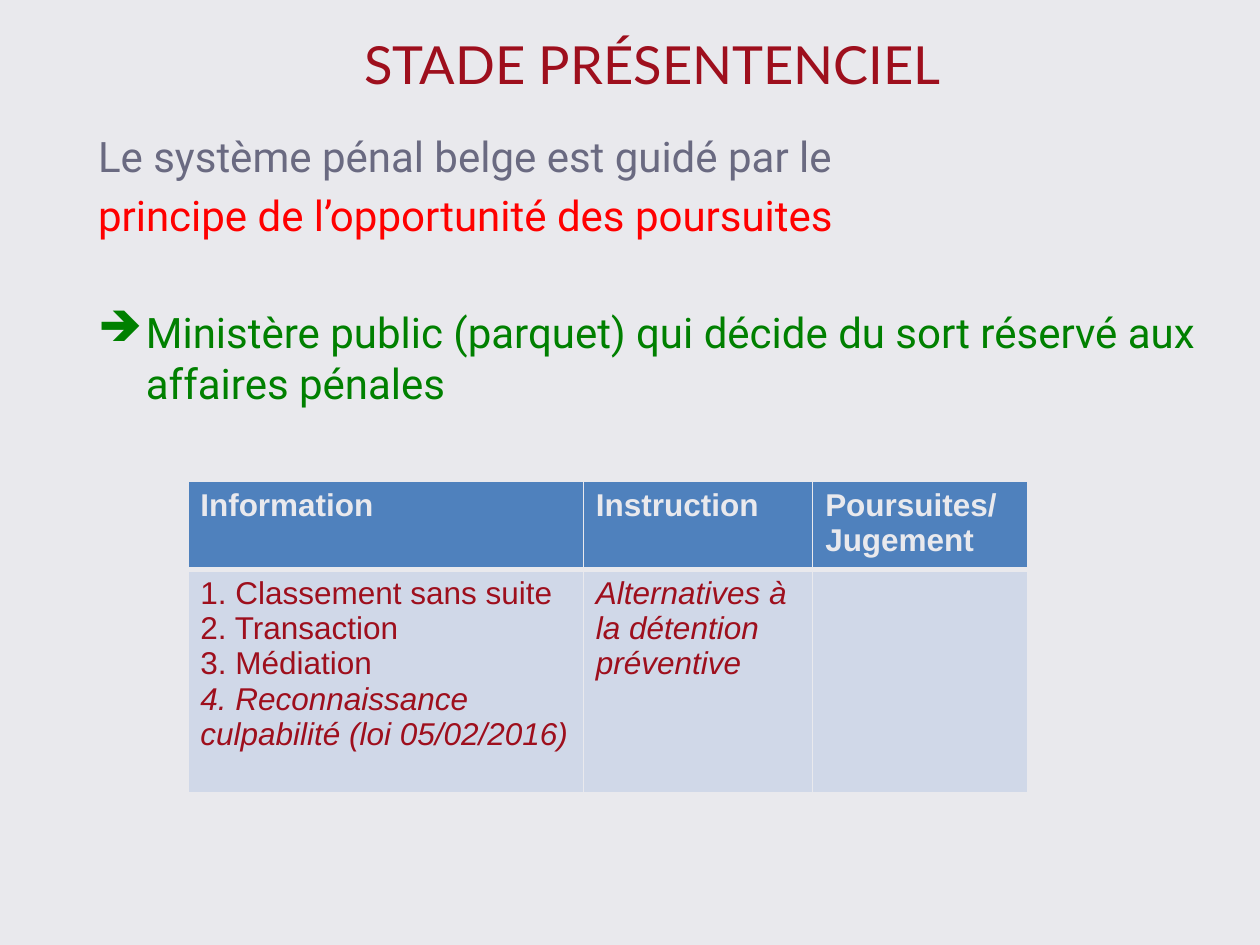
from lxml.etree import SubElement as Sub
from pptx import Presentation
from pptx.dml.color import RGBColor as RGB
from pptx.enum.text import MSO_ANCHOR as Anchor, PP_ALIGN as Align
from pptx.oxml.ns import qn
from pptx.util import Inches, Pt

PALE = RGB(0xE9, 0xE9, 0xED)
GREY = RGB(0x6A, 0x6A, 0x81)
RED = RGB(0xFF, 0x00, 0x00)
GREEN = RGB(0x00, 0x80, 0x00)
WINE = RGB(0x9E, 0x0F, 0x1D)
BLUE = RGB(0x4F, 0x81, 0xBD)
LIGHT = RGB(0xD0, 0xD8, 0xE8)

TITLE = "STADE PRÉSENTENCIEL"
LINES = [
    ("Le système pénal belge est guidé par le", GREY, 0),
    ("principe de l’opportunité des poursuites\u00a0", RED, 4.8),
    ("Ministère public (parquet) qui décide du sort réservé aux affaires pénales",
     GREEN, 38),
]
HEADS = ["Information", "Instruction", "Poursuites/ Jugement"]
STEPS = [
    "1. Classement sans suite\n2. Transaction\n3. Médiation\n"
    "4. Reconnaissance culpabilité (loi 05/02/2016)",
    "Alternatives à la détention préventive",
    "",
]
WIDTHS = [3.14, 1.82, 1.71]
HEIGHTS = [0.65, 1.77]


def style(para, name, size, color, bold=False, italic=False):
    """Format every run of a paragraph."""
    for run in para.runs:
        font = run.font
        font.name, font.size = name, Pt(size)
        font.bold, font.italic = bold, italic
        font.color.rgb = color


def add_box(slide, left, top, width, height):
    """Add a wrapping text box and return its frame."""
    box = slide.shapes.add_textbox(
        Inches(left), Inches(top), Inches(width), Inches(height))
    box.text_frame.word_wrap = True
    return box.text_frame


def add_title(slide):
    """Add the centred heading."""
    frame = add_box(slide, 0.68, 0.16, 9, 0.69)
    frame.vertical_anchor = Anchor.MIDDLE
    frame.text = TITLE
    para = frame.paragraphs[0]
    para.alignment = Align.CENTER
    style(para, "Lato", 30, WINE)


def add_arrow(para):
    """Give a paragraph an arrow bullet with a hanging indent."""
    props = para._p.get_or_add_pPr()
    props.set("marL", str(Inches(0.38)))
    props.set("indent", str(-Inches(0.38)))
    Sub(props, qn("a:buChar"), char="➔")


def add_body(slide):
    """Add the statement of principle and its consequence."""
    frame = add_box(slide, 0.68, 0.99, 9, 2.5)
    frame.text = "\n".join(text for text, _, _ in LINES)
    for para, (_, color, gap) in zip(frame.paragraphs, LINES):
        if gap:
            para.space_before = Pt(gap)
        style(para, "Roboto", 24, color)
    add_arrow(frame.paragraphs[-1])


def set_edges(cell, **widths):
    """Draw the pale borders of a cell."""
    props = cell._tc.get_or_add_tcPr()
    for side in "LRTB":
        line = Sub(props, qn("a:ln" + side), w=str(Pt(widths.get(side, 1))))
        fill = Sub(line, qn("a:solidFill"))
        Sub(fill, qn("a:srgbClr"), val=str(PALE))


def fill_cell(cell, text, color):
    """Set the text and background of a cell."""
    cell.text = text
    cell.fill.solid()
    cell.fill.fore_color.rgb = color


def add_grid(slide):
    """Add the table of stages."""
    grid = slide.shapes.add_table(
        2, 3, Inches(1.49), Inches(3.82),
        Inches(sum(WIDTHS)), Inches(sum(HEIGHTS))).table
    for row, high in zip(grid.rows, HEIGHTS):
        row.height = Inches(high)
    for col, wide in enumerate(WIDTHS):
        grid.columns[col].width = Inches(wide)
        head, step = grid.cell(0, col), grid.cell(1, col)
        set_edges(head, B=3)
        set_edges(step, T=3)
        fill_cell(head, HEADS[col], BLUE)
        fill_cell(step, STEPS[col], LIGHT)
        style(head.text_frame.paragraphs[0], "Arial", 18, PALE, bold=True)
        paras = step.text_frame.paragraphs
        for para in paras:
            style(para, "Arial", 18, WINE)
        style(paras[-1], "Arial", 18, WINE, italic=True)


def main():
    """Build and save the slide."""
    deck = Presentation()
    deck.slide_width, deck.slide_height = Inches(10), Inches(7.5)
    slide = deck.slides.add_slide(deck.slide_layouts[6])
    back = slide.background.fill
    back.solid()
    back.fore_color.rgb = PALE
    add_body(slide)
    add_title(slide)
    add_grid(slide)
    deck.save("out.pptx")


if __name__ == "__main__":
    main()
